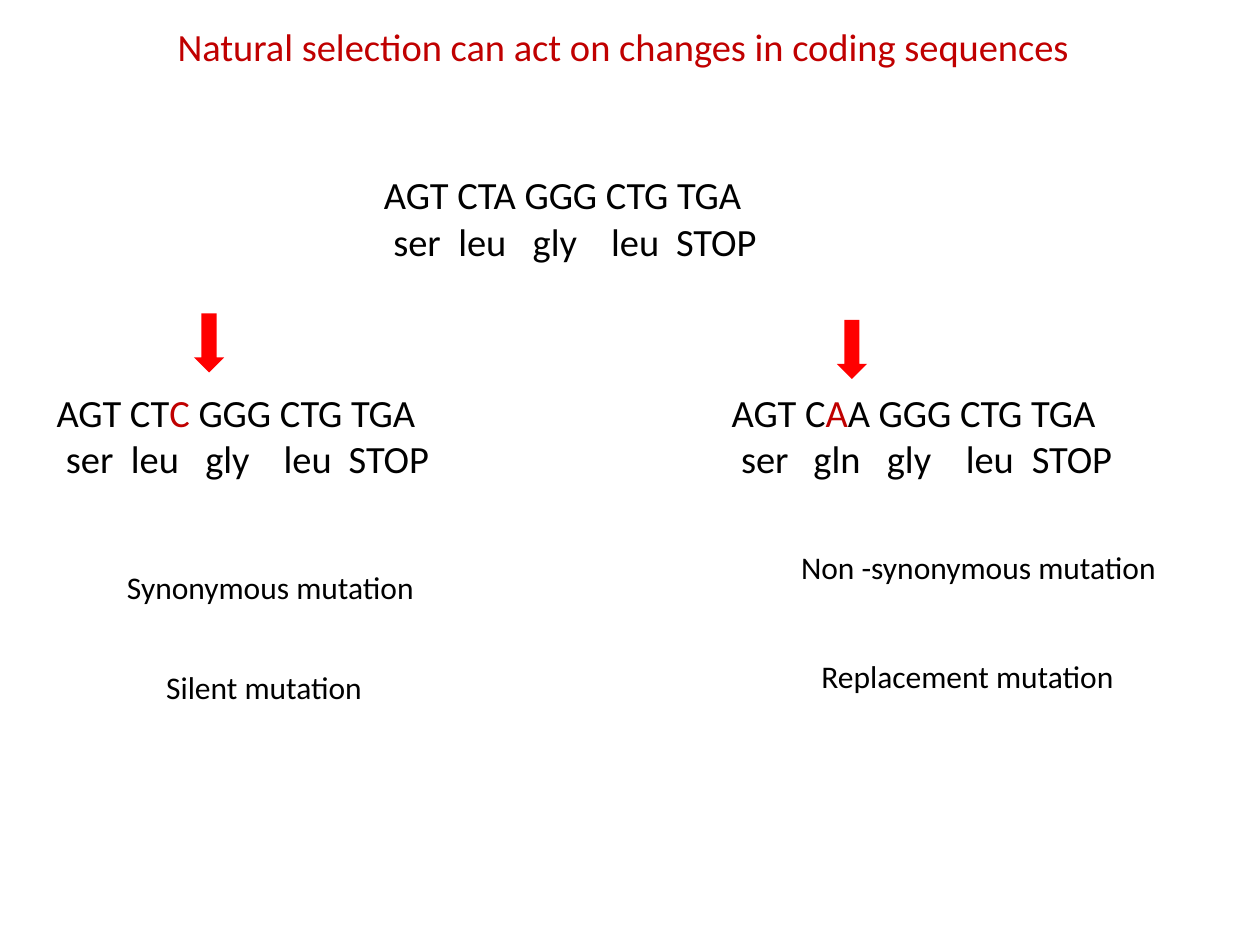
"""Build a slide on synonymous and non-synonymous mutations in a coding sequence."""
import pptx
import pptx.dml.color
import pptx.enum.shapes
import pptx.enum.text
import pptx.oxml
import pptx.oxml.ns
import pptx.util

Cm = pptx.util.Cm
COLORS = {"text": "000000", "accent": "C00000", "arrow": "FF0000"}
FONT = "Calibri"
LARGE, SMALL = 22, 18

TITLE = ("Natural selection can act on changes in coding sequences", 3.33, 0.33, 19.08, 1.19)
LABELS = [
    ("Synonymous mutation", 2.31, 11.33, 6.35),
    ("Silent mutation", 3.1, 13.34, 4.52),
    ("Non -synonymous mutation", 15.9, 10.92, 7.75),
    ("Replacement mutation", 16.31, 13.13, 6.48),
]
LABEL_HEIGHT = 1.02
LEU_STOPS = [0.19, 1.5, 3.0, 4.58, 5.89]
GLN_STOPS = [0.19, 1.65, 3.13, 4.72, 6.05]
SEQUENCES = [
    {"dna": [("AGT CTA GGG CTG TGA", "text")],
     "protein": ["ser", "leu", "gly", "leu", "STOP"],
     "stops": LEU_STOPS, "box": (7.49, 3.33, 8.13)},
    {"dna": [("AGT CT", "text"), ("C", "accent"), (" GGG CTG TGA", "text")],
     "protein": ["ser", "leu", "gly", "leu", "STOP"],
     "stops": LEU_STOPS, "box": (0.89, 7.72, 8.13)},
    {"dna": [("AGT C", "text"), ("A", "accent"), ("A GGG CTG TGA", "text")],
     "protein": ["ser", "gln", "gly", "leu", "STOP"],
     "stops": GLN_STOPS, "box": (14.5, 7.72, 8.28)},
]
SEQUENCE_HEIGHT = 2.13
ARROWS = [(3.91, 6.32), (16.87, 6.45)]
ARROW_SIZE = (0.61, 1.19)


def rgb(name):
    return pptx.dml.color.RGBColor.from_string(COLORS[name])


def add_text(slide, box, paragraphs, size):
    tf = slide.shapes.add_textbox(*map(Cm, box)).text_frame
    frame_format = {"word_wrap": False,
                    "auto_size": pptx.enum.text.MSO_AUTO_SIZE.SHAPE_TO_FIT_TEXT}
    for key, value in frame_format.items():
        setattr(tf, key, value)
    for i, runs in enumerate(paragraphs):
        p = tf.add_paragraph() if i else tf.paragraphs[0]
        for text, color in runs:
            r = p.add_run()
            r.text = text
            for key, value in {"name": FONT, "size": pptx.util.Pt(size)}.items():
                setattr(r.font, key, value)
            r.font.color.rgb = rgb(color)
    return tf


def add_tab_stops(p, stops):
    tabs = pptx.oxml.parse_xml(f"<a:tabLst {pptx.oxml.ns.nsdecls('a')}/>")
    for stop in stops:
        tab = tabs.makeelement(pptx.oxml.ns.qn("a:tab"), {"pos": str(Cm(stop)), "algn": "l"})
        tabs.append(tab)
    p._p.get_or_add_pPr().append(tabs)


def main():
    prs = pptx.Presentation()
    prs.slide_width, prs.slide_height = Cm(25.4), Cm(19.05)
    slide = prs.slides.add_slide(prs.slide_layouts[6])

    title, *title_box = TITLE
    add_text(slide, title_box, [[(title, "accent")]], LARGE)
    for seq in SEQUENCES:
        protein = "".join("\t" + residue for residue in seq["protein"])
        tf = add_text(slide, (*seq["box"], SEQUENCE_HEIGHT),
                      [seq["dna"], [(protein, "text")]], LARGE)
        add_tab_stops(tf.paragraphs[1], seq["stops"])
    for label, *box in LABELS:
        add_text(slide, (*box, LABEL_HEIGHT), [[(label, "text")]], SMALL)
    for position in ARROWS:
        sp = slide.shapes.add_shape(pptx.enum.shapes.MSO_SHAPE.DOWN_ARROW,
                                    *map(Cm, position + ARROW_SIZE))
        sp.shadow.inherit = False
        sp.fill.solid()
        sp.fill.fore_color.rgb = rgb("arrow")
        sp.line.fill.background()

    prs.save("out.pptx")


if __name__ == "__main__":
    main()
